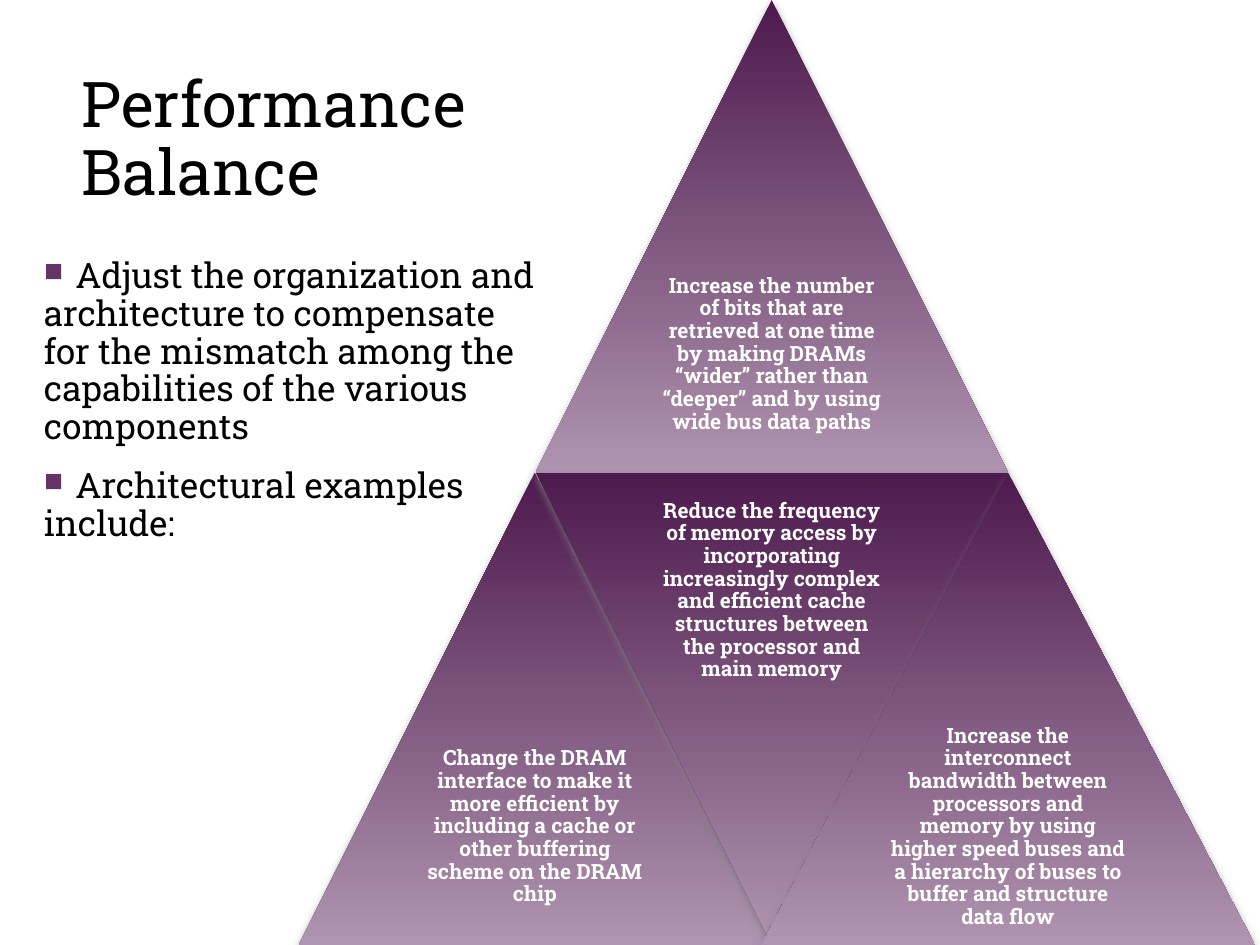
from dataclasses import dataclass

from lxml.etree import SubElement as Sub
from pptx import Presentation
from pptx.dml.color import RGBColor as Rgb
from pptx.enum.shapes import MSO_SHAPE as Shape
from pptx.enum.text import MSO_ANCHOR as Anchor, PP_ALIGN as Align
from pptx.oxml.ns import qn
from pptx.util import Inches, Pt


@dataclass(frozen=True)
class Theme:
    """Hold the font, colours and type sizes."""
    font: str = "Roboto Slab"
    ink: str = "000000"
    pale: str = "FFFFFF"
    dark: str = "4D1A4D"
    light: str = "AF94AF"
    mark: str = "663366"
    shade: str = "808080"
    title: int = 36
    body: int = 20
    label: int = 12


THEME = Theme()
SIDE = 3.75

TITLE = "Performance \vBalance"
POINTS = [
    ["Adjust the organization and", "architecture to compensate",
     "for the mismatch among the", "capabilities of the various", "components"],
    ["Architectural examples", "include:"],
]
PARTS = [
    (4.25, 0, SIDE, 0, "Increase the number of bits that are retrieved at one time "
     "by making DRAMs “wider” rather than “deeper” and by using wide bus data paths"),
    (2.37, SIDE, SIDE, 0, "Change the DRAM interface to make it more efficient by "
     "including a cache or other buffering scheme on the DRAM chip"),
    (4.25, SIDE, SIDE, 180, "Reduce the frequency of memory access by incorporating "
     "increasingly complex and efficient cache structures between the processor and main memory"),
    (6.04, SIDE, 3.92, 0, "Increase the interconnect bandwidth between processors and memory "
     "by using higher speed buses and a hierarchy of buses to buffer and structure data flow"),
]


def add_box(slide, left, top, width, height, anchor=Anchor.TOP, pad=None):
    """Add a wrapping text box and return its frame."""
    box = slide.shapes.add_textbox(*map(Inches, (left, top, width, height)))
    frame = box.text_frame
    frame.word_wrap = True
    frame.vertical_anchor = anchor
    if pad is not None:
        frame.margin_left = frame.margin_right = Inches(pad)
        frame.margin_top = frame.margin_bottom = Inches(pad)
    return frame


def put_text(para, text, size, color=THEME.ink, bold=False, align=Align.LEFT, before=0):
    """Write formatted text into a paragraph."""
    para.text = text
    para.alignment = align
    para.line_spacing = 0.9
    para.space_before = Pt(before)
    for run in para.runs:
        font = run.font
        font.name, font.size, font.bold = THEME.font, Pt(size), bold
        font.color.rgb = Rgb.from_string(color)


def set_mark(para, shown):
    """Indent a paragraph and show or hide its square bullet."""
    para.level = 1
    props = para._p.get_or_add_pPr()
    props.set("marL", str(Inches(0.5)))
    props.set("indent", str(Inches(-0.25)))
    if not shown:
        Sub(props, qn("a:buNone"))
        return
    color = Sub(props, qn("a:buClr"))
    Sub(color, qn("a:srgbClr"), val=THEME.mark)
    Sub(props, qn("a:buSzPct"), val="75000")
    Sub(props, qn("a:buChar"), char="■")


def add_shade(shape):
    """Give a shape a soft shadow below it."""
    shape.shadow.inherit = False
    effects = shape.element.spPr.find(qn("a:effectLst"))
    outer = Sub(effects, qn("a:outerShdw"), blurRad=str(Pt(5)), dist=str(Pt(2)),
                dir="5400000", rotWithShape="0")
    color = Sub(outer, qn("a:srgbClr"), val=THEME.shade)
    Sub(color, qn("a:alpha"), val="75000")


def add_part(slide, left, top, width, turn, text):
    """Add a shaded triangle with its label in the wide half."""
    shape = slide.shapes.add_shape(
        Shape.ISOSCELES_TRIANGLE, *map(Inches, (left, top, width, SIDE)))
    shape.rotation = turn
    shape.line.fill.background()
    shape.fill.gradient()
    shape.fill.gradient_angle = 270
    for stop, color, place in zip(shape.fill.gradient_stops, (THEME.dark, THEME.light), (0, 1)):
        stop.color.rgb = Rgb.from_string(color)
        stop.position = place
    shape.element.spPr.find(qn("a:gradFill")).set("rotWithShape", "0")
    add_shade(shape)
    half = SIDE / 2
    frame = add_box(slide, left + width / 4, top if turn else top + half,
                    width / 2, half, Anchor.MIDDLE, 0.05)
    put_text(frame.paragraphs[0], text, THEME.label, THEME.pale, bold=True, align=Align.CENTER)


def add_points(slide):
    """Add the bulleted lines."""
    frame = add_box(slide, 0, 2, 4.83, 3.01)
    lines = [(text, row == 0) for point in POINTS for row, text in enumerate(point)]
    for index, (text, first) in enumerate(lines):
        para = frame.add_paragraph() if index else frame.paragraphs[0]
        put_text(para, text, THEME.body, before=12 if first else 0)
        set_mark(para, first)


def main():
    """Build and save the slide."""
    deck = Presentation()
    deck.slide_width, deck.slide_height = Inches(10), Inches(7.5)
    slide = deck.slides.add_slide(deck.slide_layouts[6])
    title = add_box(slide, 0.55, 0.53, 5.2, 1.47)
    put_text(title.paragraphs[0], TITLE, THEME.title)
    for part in PARTS:
        add_part(slide, *part)
    add_points(slide)
    deck.save("out.pptx")


if __name__ == "__main__":
    main()
